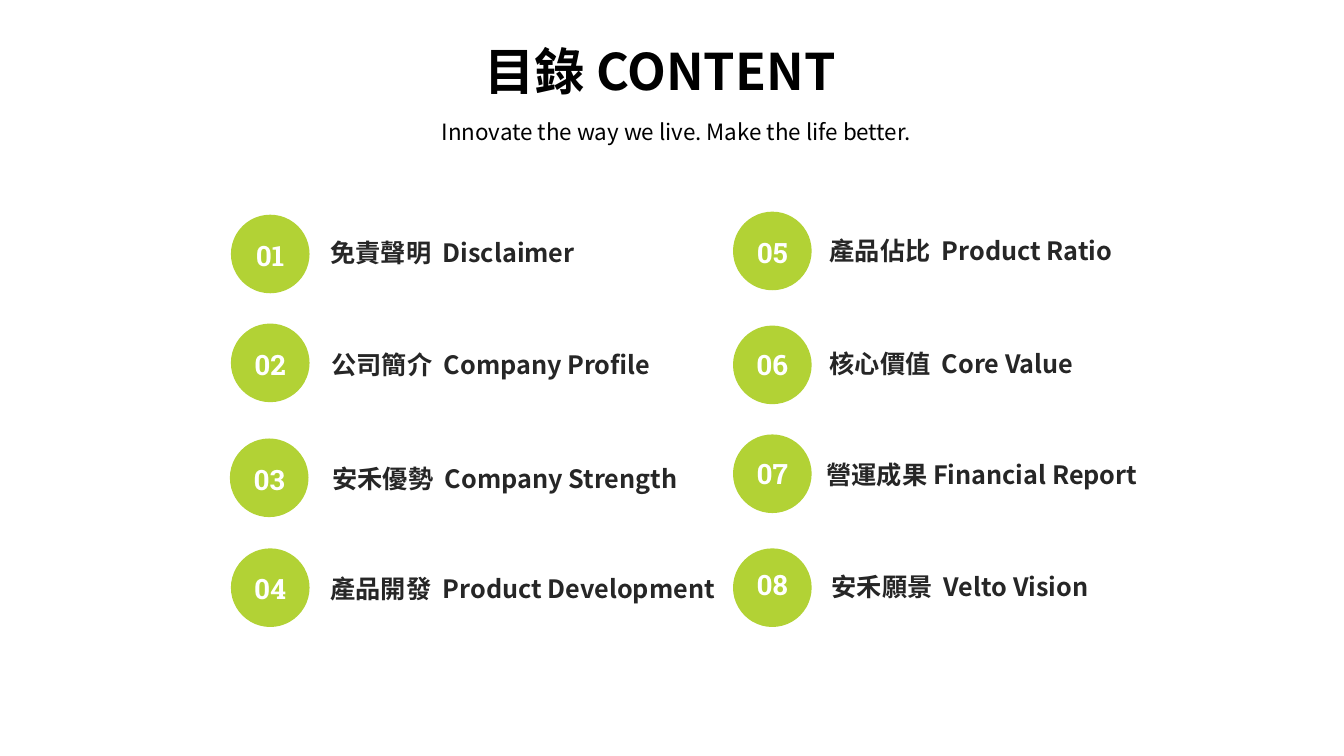
from dataclasses import dataclass

from lxml import etree
from pptx import Presentation
from pptx.dml.color import RGBColor
from pptx.enum.shapes import MSO_SHAPE
from pptx.enum.text import MSO_ANCHOR, MSO_AUTO_SIZE, PP_ALIGN
from pptx.oxml.ns import qn
from pptx.util import Inches, Pt

OVAL = MSO_SHAPE.OVAL
TOP, MIDDLE = MSO_ANCHOR.TOP, MSO_ANCHOR.MIDDLE
LEFT, CENTER = PP_ALIGN.LEFT, PP_ALIGN.CENTER
NO_AUTOFIT = MSO_AUTO_SIZE.NONE
TITLE_ONLY = 5


@dataclass(frozen=True)
class TextStyle:
    font: str
    size: int
    color: RGBColor
    bold: bool = True
    align: PP_ALIGN = LEFT
    anchor: MSO_ANCHOR = TOP
    line_spacing: float | Pt = 1.0
    space_before: int = 0


@dataclass(frozen=True)
class Theme:
    badge: RGBColor = RGBColor(0xB2, 0xD2, 0x35)
    title: TextStyle = TextStyle("Noto Sans CJK SC", 36, RGBColor(0, 0, 0),
                                 align=CENTER, anchor=MIDDLE, line_spacing=0.9)
    tagline: TextStyle = TextStyle("Noto Sans CJK SC", 16, RGBColor(0, 0, 0),
                                   bold=False, align=CENTER, line_spacing=0.9,
                                   space_before=10)
    number: TextStyle = TextStyle("Roboto Slab", 20, RGBColor(255, 255, 255),
                                  align=CENTER)
    label: TextStyle = TextStyle("Noto Sans CJK SC", 18, RGBColor(0x26, 0x26, 0x26),
                                 anchor=MIDDLE, line_spacing=Pt(20), space_before=10)


THEME = Theme()
BADGE_SIZE = 0.78
NUMBER_WIDTH, NUMBER_HEIGHT = 0.57, 0.44
LABEL_HEIGHT = 0.73

# Each entry: label, badge (left, top), number top, label (left, top, width)
ENTRIES = [
    ("免責聲明  Disclaimer", (2.29, 2.13), 2.32, (3.18, 2.15, 3.02)),
    ("公司簡介  Company Profile", (2.29, 3.21), 3.4, (3.19, 3.26, 3.73)),
    ("安禾優勢  Company Strength", (2.28, 4.35), 4.54, (3.2, 4.39, 4.28)),
    ("產品開發  Product Development", (2.29, 5.44), 5.62, (3.18, 5.48, 4.28)),
    ("產品佔比  Product Ratio", (7.27, 2.1), 2.29, (8.13, 2.13, 3.17)),
    ("核心價值  Core Value", (7.27, 3.23), 3.4, (8.13, 3.25, 3.47)),
    ("營運成果 Financial Report", (7.27, 4.31), 4.48, (8.1, 4.35, 4.63)),
    ("安禾願景  Velto Vision", (7.27, 5.44), 5.58, (8.15, 5.46, 3.36)),
]


def write_text(shape, text, style):
    frame = shape.text_frame
    frame.text = text
    frame.word_wrap = True
    frame.auto_size = NO_AUTOFIT
    frame.vertical_anchor = style.anchor
    paragraph = frame.paragraphs[0]
    paragraph.alignment = style.align
    paragraph.line_spacing = style.line_spacing
    paragraph.space_before = Pt(style.space_before)
    font = paragraph.font
    font.size = Pt(style.size)
    font.bold = style.bold
    font.color.rgb = style.color
    font.name = style.font
    latin = paragraph._p.pPr.find(".//" + qn("a:latin"))
    east_asian = etree.Element(qn("a:ea"), typeface=style.font)
    latin.addnext(east_asian)


def add_text(slide, box, text, style):
    shape = slide.shapes.add_textbox(*map(Inches, box))
    write_text(shape, text, style)


def add_heading(slide, box):
    left, top, width, height = box
    title = slide.shapes.title
    title.left, title.top = Inches(left + 1.97), Inches(top)
    title.width, title.height = Inches(width - 4.27), Inches(0.67)
    write_text(title, "目錄 CONTENT", THEME.title)
    tagline_top = top + 0.75
    add_text(slide, (left, tagline_top, width, top + height - tagline_top),
             "Innovate the way we live. Make the life better.", THEME.tagline)


def add_entry(slide, number, label, badge_corner, number_top, label_box):
    badge_left, badge_top = badge_corner
    badge = slide.shapes.add_shape(
        OVAL, *map(Inches, (badge_left, badge_top, BADGE_SIZE, BADGE_SIZE)))
    badge.shadow.inherit = False
    badge.fill.solid()
    badge.fill.fore_color.rgb = THEME.badge
    badge.line.fill.background()

    number_left = badge_left + (BADGE_SIZE - NUMBER_WIDTH) / 2
    add_text(slide, (number_left, number_top, NUMBER_WIDTH, NUMBER_HEIGHT),
             f"{number:02d}", THEME.number)
    add_text(slide, (*label_box, LABEL_HEIGHT), label, THEME.label)


def main():
    presentation = Presentation()
    presentation.slide_width = Inches(13.33)
    presentation.slide_height = Inches(7.5)
    slide = presentation.slides.add_slide(presentation.slide_layouts[TITLE_ONLY])
    add_heading(slide, (0.96, 0.4, 11.5, 1.13))
    for number, entry in enumerate(ENTRIES, start=1):
        add_entry(slide, number, *entry)
    presentation.save("out.pptx")


if __name__ == "__main__":
    main()
